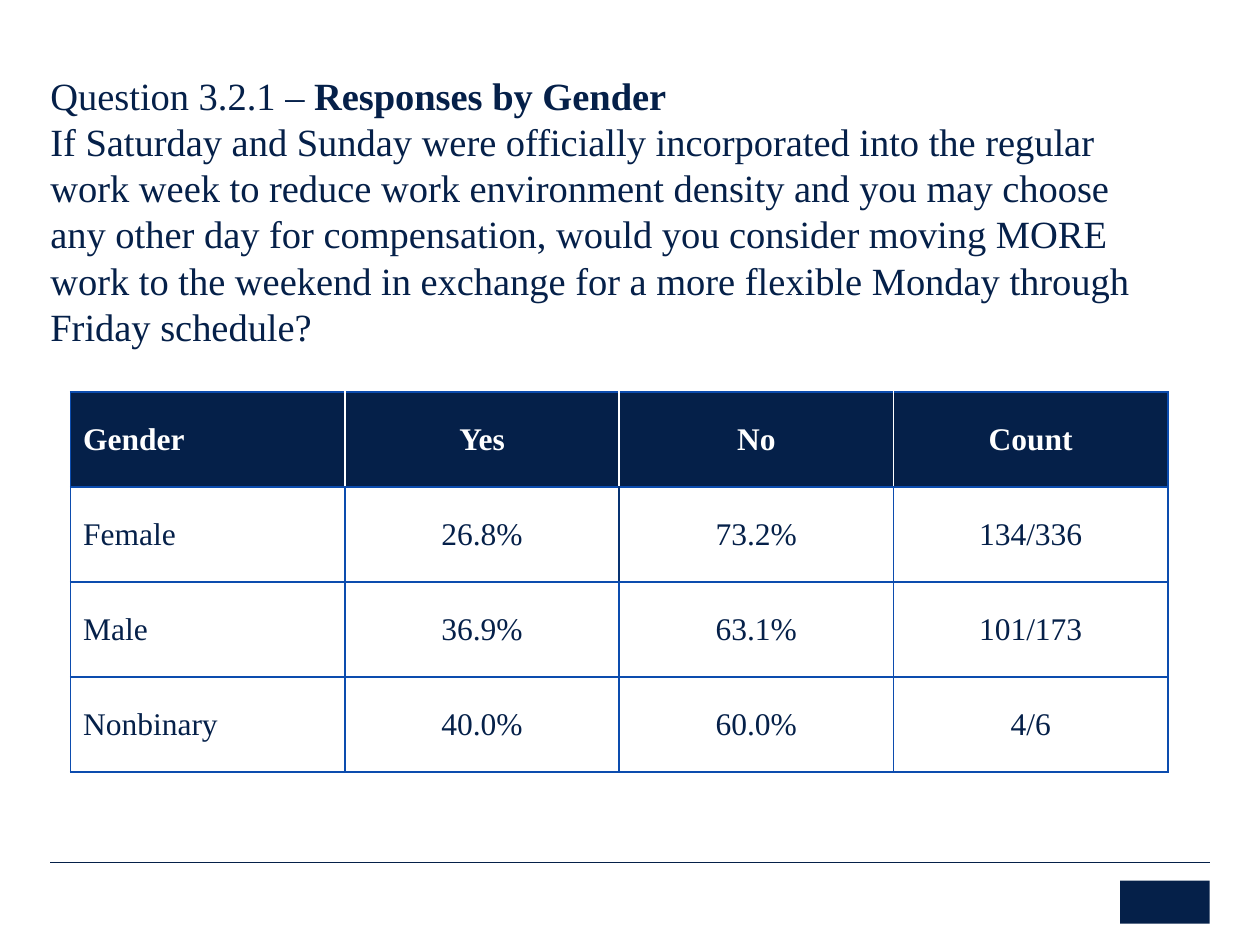
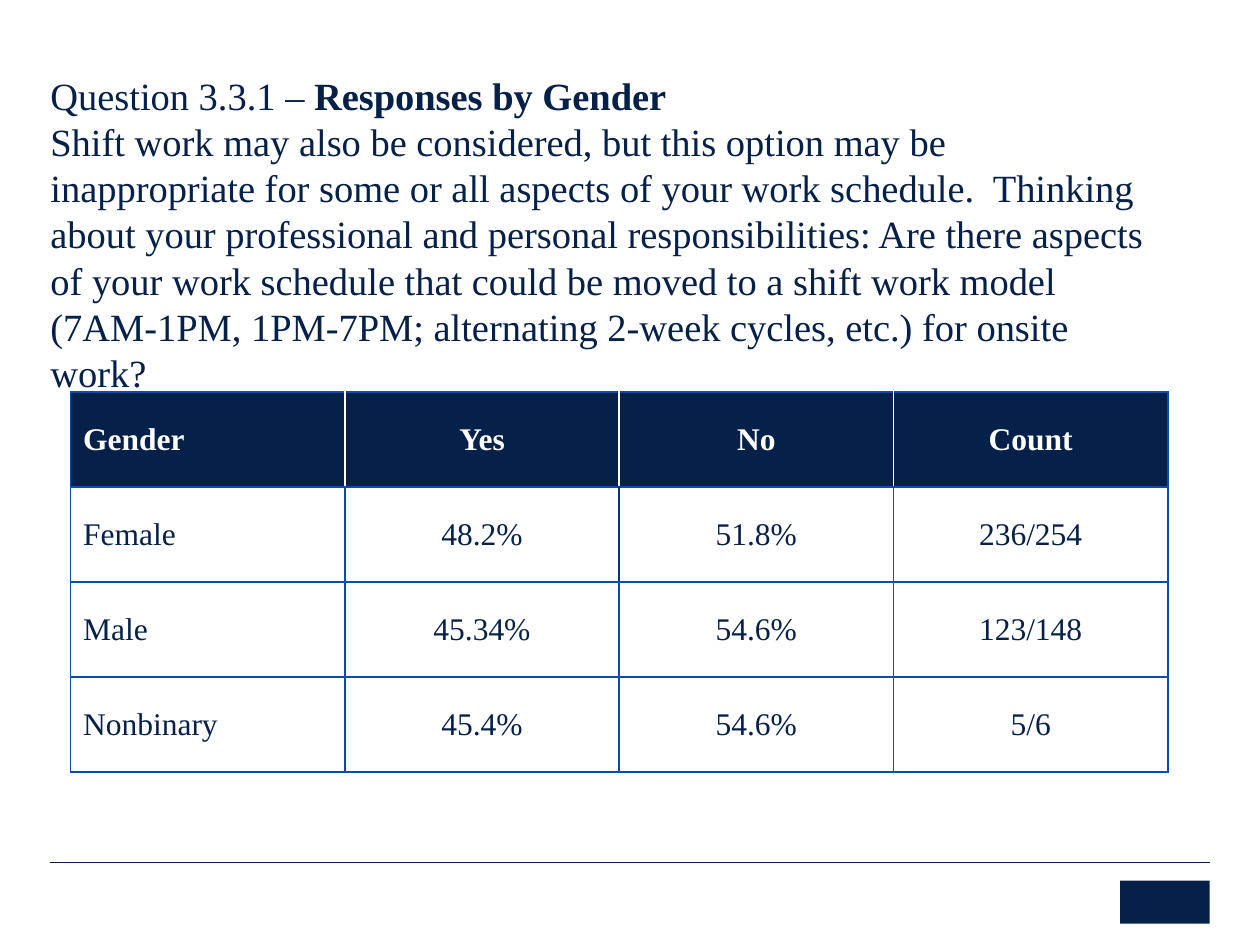
from lxml.etree import SubElement
from pptx import Presentation
from pptx.dml.color import RGBColor
from pptx.enum.shapes import MSO_CONNECTOR, MSO_SHAPE
from pptx.enum.text import MSO_ANCHOR, MSO_AUTO_SIZE, PP_ALIGN
from pptx.oxml.ns import qn
from pptx.util import Inches, Pt

NAVY = "052049"
BLUE = "0C4CAE"
DARK_BLUE = "083271"
WHITE = "FFFFFF"
FONT = "Times New Roman"
HEADER = ["Gender", "Yes", "No", "Count"]

QUESTIONS = [
    (
        "Question 3.2.1 – ",
        "If Saturday and Sunday were officially incorporated into the regular work week "
        "to reduce work environment density and you may choose any other day for "
        "compensation, would you consider moving MORE work to the weekend in exchange "
        "for a more flexible Monday through Friday schedule?",
        [
            ["Female", "26.8%", "73.2%", "134/336"],
            ["Male", "36.9%", "63.1%", "101/173"],
            ["Nonbinary", "40.0%", "60.0%", "4/6"],
        ],
    ),
    (
        "Question 3.3.1 – ",
        "Shift work may also be considered, but this option may be inappropriate for "
        "some or all aspects of your work schedule.  Thinking about your professional "
        "and personal responsibilities: Are there aspects of your work schedule that "
        "could be moved to a shift work model (7AM-1PM, 1PM-7PM; alternating 2-week "
        "cycles, etc.) for onsite work?",
        [
            ["Female", "48.2%", "51.8%", "236/254"],
            ["Male", "45.34%", "54.6%", "123/148"],
            ["Nonbinary", "45.4%", "54.6%", "5/6"],
        ],
    ),
]


def style_font(font, size, color):
    font.name = FONT
    font.size = Pt(size)
    font.color.rgb = RGBColor.from_string(color)


def set_borders(cell, colors):
    properties = cell._tc.get_or_add_tcPr()
    for position, (side, color) in enumerate(zip(("lnL", "lnR", "lnT", "lnB"), colors)):
        line = SubElement(properties, qn(f"a:{side}"), w=str(Pt(1)))
        fill = SubElement(line, qn("a:solidFill"))
        SubElement(fill, qn("a:srgbClr"), val=color)
        properties.insert(position, line)


deck = Presentation()
deck.slide_width = Inches(10)
deck.slide_height = Inches(7.5)

for number, question, answers in QUESTIONS:
    page = deck.slides.add_slide(deck.slide_layouts[5])

    rule = page.shapes.add_connector(
        MSO_CONNECTOR.STRAIGHT, Inches(0.4), Inches(6.84), Inches(9.6), Inches(6.84)
    )
    rule.line.color.rgb = RGBColor.from_string(NAVY)
    rule.line.width = Pt(0.25)
    SubElement(rule._element.spPr, qn("a:effectLst"))

    emblem = page.shapes.add_shape(
        MSO_SHAPE.RECTANGLE, Inches(8.89), Inches(6.99), Inches(0.71), Inches(0.34)
    )
    emblem.shadow.inherit = False
    emblem.fill.solid()
    emblem.fill.fore_color.rgb = RGBColor.from_string(NAVY)
    emblem.line.fill.background()

    title = page.shapes.title
    title.left, title.top = Inches(0.3), Inches(0.52)
    title.width, title.height = Inches(9), Inches(2.59)
    frame = title.text_frame
    frame.word_wrap = True
    frame.auto_size = MSO_AUTO_SIZE.NONE
    frame.vertical_anchor = MSO_ANCHOR.TOP
    frame.margin_bottom = 0
    heading = frame.paragraphs[0]
    heading.add_run().text = number
    span = heading.add_run()
    span.text = "Responses by Gender"
    span.font.bold = True
    frame.add_paragraph().text = question
    for para in frame.paragraphs:
        para.alignment = PP_ALIGN.LEFT
        para.line_spacing = 1.0
        style_font(para.font, 22, NAVY)

    rows = [HEADER] + answers
    table = page.shapes.add_table(
        len(rows), len(HEADER), Inches(0.56), Inches(3.11), Inches(8.71), Inches(3.02)
    ).table
    table.horz_banding = False
    for row_index, row in enumerate(rows):
        is_header = row_index == 0
        for column_index, text in enumerate(row):
            cell = table.cell(row_index, column_index)
            cell.text = text
            cell.vertical_anchor = MSO_ANCHOR.MIDDLE
            cell.fill.solid()
            cell.fill.fore_color.rgb = RGBColor.from_string(NAVY if is_header else WHITE)
            para = cell.text_frame.paragraphs[0]
            para.alignment = PP_ALIGN.CENTER if column_index else PP_ALIGN.LEFT
            para.font.bold = is_header
            style_font(para.font, 18, WHITE if is_header else NAVY)
            inner = WHITE if is_header else BLUE
            edges = [BLUE] + [inner] * (len(HEADER) - 1) + [BLUE]
            if row_index == 1:
                edges[2] = DARK_BLUE
            set_borders(cell, (edges[column_index], edges[column_index + 1], BLUE, BLUE))

deck.save("out.pptx")
